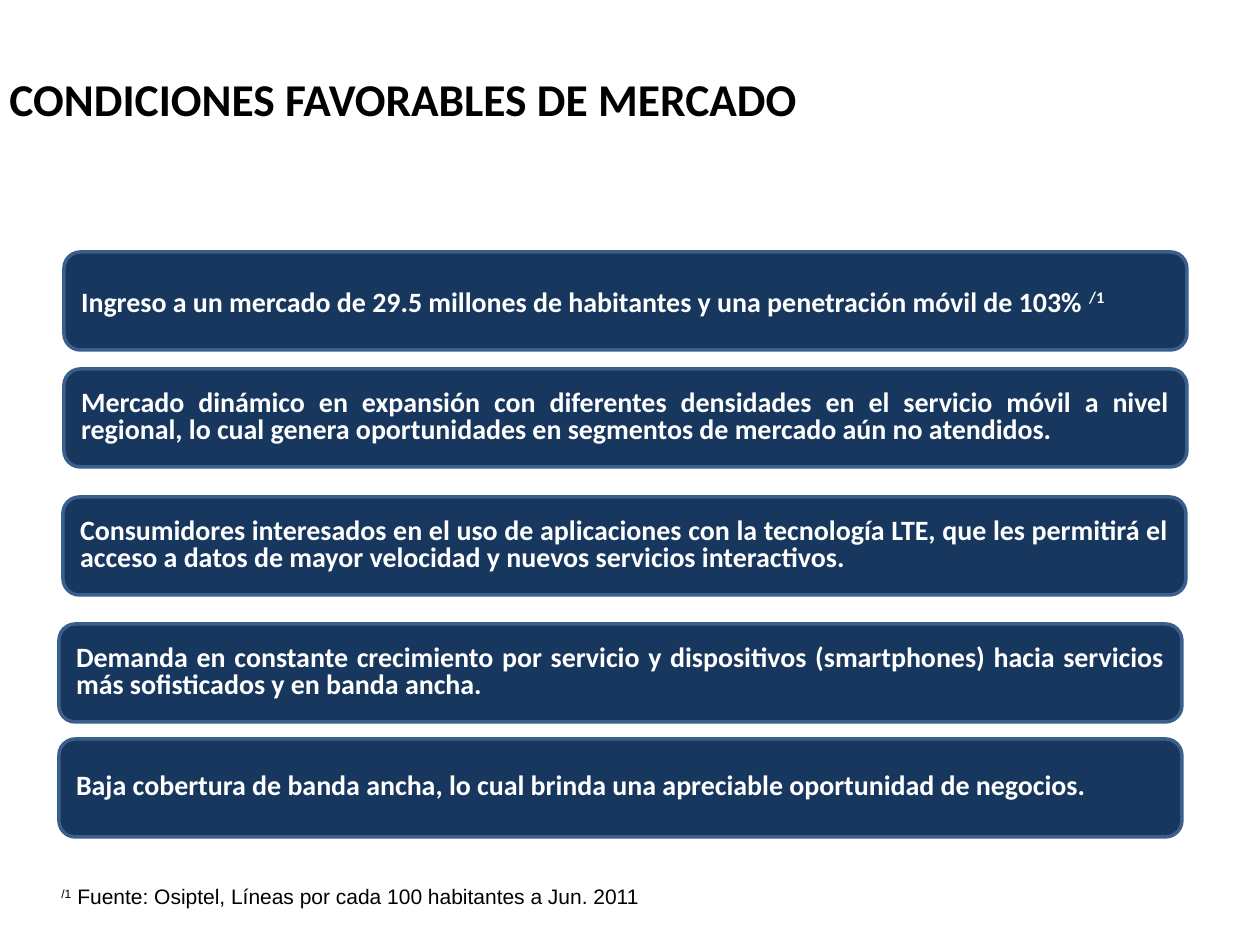
from pptx import Presentation
from pptx.dml.color import RGBColor
from pptx.enum.shapes import MSO_SHAPE as Shape
from pptx.enum.text import MSO_ANCHOR as Anchor, PP_ALIGN as Align
from pptx.util import Emu, Pt

PX = 914400 // 126
BLACK = RGBColor(0x00, 0x00, 0x00)
WHITE = RGBColor(0xFF, 0xFF, 0xFF)
NAVY = RGBColor(0x17, 0x37, 0x5E)
STEEL = RGBColor(0x3A, 0x5F, 0x8C)

MARK = "/1"
TITLE = "CONDICIONES FAVORABLES DE MERCADO"
SOURCE = [MARK, " Fuente: Osiptel, Líneas por cada 100 habitantes a Jun. 2011"]
CONDITIONS = [
    (64, 252, ["Ingreso a un mercado de 29.5 millones de habitantes y una penetración móvil de 103% ", MARK]),
    (64, 369, ["Mercado dinámico en expansión con diferentes densidades en el servicio móvil a nivel regional, "
               "lo cual genera oportunidades en segmentos de mercado aún no atendidos."]),
    (63, 497, ["Consumidores interesados en el uso de aplicaciones con la tecnología LTE, que les permitirá el "
               "acceso a datos de mayor velocidad y nuevos servicios interactivos."]),
    (59, 624, ["Demanda en constante crecimiento por servicio y dispositivos (smartphones) hacia servicios "
               "más sofisticados y en banda ancha."]),
    (59, 739, ["Baja cobertura de banda ancha, lo cual brinda una apreciable oportunidad de negocios."]),
]
BAR_WIDTH, BAR_HEIGHT = 1123, 98


def px(*lengths):
    return [Emu(length * PX) for length in lengths]


def write(holder, pieces, font_name, size, color, bold=False):
    frame = holder.text_frame
    frame.word_wrap = True
    frame.vertical_anchor = Anchor.MIDDLE
    paragraph = frame.paragraphs[0]
    paragraph.alignment = Align.LEFT
    for piece in pieces:
        run = paragraph.add_run()
        run.text = piece
        run.font.name = font_name
        run.font.size = Pt(size)
        run.font.bold = bold
        run.font.color.rgb = color
        if piece == MARK:
            run._r.get_or_add_rPr().set("baseline", "30000")
    return paragraph


def add_condition(slide, left, top, pieces):
    bar = slide.shapes.add_shape(Shape.ROUNDED_RECTANGLE, *px(left, top, BAR_WIDTH, BAR_HEIGHT))
    bar.shadow.inherit = False
    bar.fill.solid()
    bar.fill.fore_color.rgb = NAVY
    bar.line.color.rgb = STEEL
    bar.line.width = Pt(2)
    paragraph = write(bar, pieces, "Calibri", 16, WHITE, bold=True)
    if MARK not in pieces:
        paragraph.alignment = Align.JUSTIFY
        paragraph.line_spacing = 0.8


def main():
    """Build the slide on favourable market conditions."""
    deck = Presentation()
    deck.slide_width, deck.slide_height = px(1260, 945)
    slide = deck.slides.add_slide(deck.slide_layouts[6])
    title = slide.shapes.add_textbox(*px(-3, 50, 863, 97))
    write(title, [TITLE], "Calibri", 26, BLACK, bold=True)
    source = slide.shapes.add_textbox(*px(49, 872, 1063, 49))
    write(source, SOURCE, "Arial", 12, BLACK)
    for left, top, pieces in CONDITIONS:
        add_condition(slide, left, top, pieces)
    deck.save("out.pptx")


if __name__ == "__main__":
    main()
